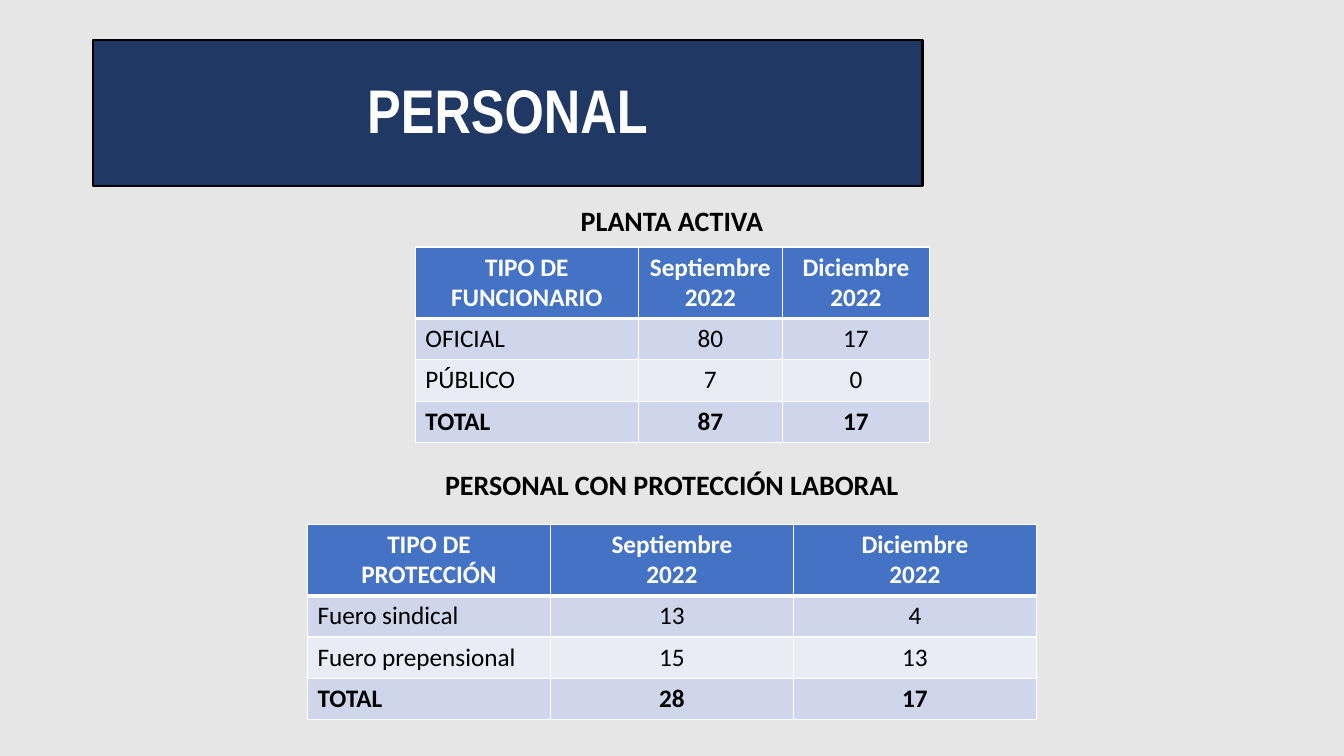
from dataclasses import dataclass

from lxml.etree import SubElement
from pptx import Presentation
from pptx.dml.color import RGBColor
from pptx.enum.text import MSO_ANCHOR, MSO_AUTO_SIZE, PP_ALIGN
from pptx.oxml.ns import qn
from pptx.util import Inches, Pt

COLORS = {
    "background": "E7E6E6",
    "banner": "203864",
    "header": "4472C4",
    "band_dark": "CFD5EA",
    "band_light": "E9EBF5",
    "white": "FFFFFF",
    "black": "000000",
}
HEADER_HEIGHT, ROW_HEIGHT = 0.71, 0.41


@dataclass
class StaffTable:
    heading: str
    heading_top: float
    left: float
    top: float
    widths: list[float]
    rows: list[list[str]]


STAFF_TABLES = [
    StaffTable("PLANTA ACTIVA", 1.97, 4.12, 2.45, [2.21, 1.43, 1.46], [
        ["TIPO DE FUNCIONARIO", "Septiembre\n2022", "Diciembre\n2022"],
        ["OFICIAL", "80", "17"],
        ["PÚBLICO", "7", "0"],
        ["TOTAL", "87", "17"],
    ]),
    StaffTable("PERSONAL CON PROTECCIÓN LABORAL", 4.59, 3.05, 5.2, [2.41] * 3, [
        ["TIPO DE PROTECCIÓN", "Septiembre\n2022", "Diciembre\n2022"],
        ["Fuero sindical", "13", "4"],
        ["Fuero prepensional", "15", "13"],
        ["TOTAL", "28", "17"],
    ]),
]


def rgb(name: str) -> RGBColor:
    return RGBColor.from_string(COLORS[name])


def format_text(frame, size: float, color: str, bold: bool, align,
                font_name: str = "Calibri") -> None:
    for paragraph in frame.paragraphs:
        paragraph.alignment = align
        for run in paragraph.runs:
            run.font.name = font_name
            run.font.size = Pt(size)
            run.font.bold = bold
            run.font.color.rgb = rgb(color)


def add_borders(cell, bottom_width: float) -> None:
    properties = cell._tc.get_or_add_tcPr()
    for side, width in (("L", 1), ("R", 1), ("T", 1), ("B", bottom_width)):
        border = SubElement(properties, qn(f"a:ln{side}"), w=str(Pt(width)))
        fill = SubElement(border, qn("a:solidFill"))
        SubElement(fill, qn("a:srgbClr"), val=COLORS["white"])


def add_heading(slide, text: str, top: float) -> None:
    heading = slide.shapes.add_textbox(
        Inches(3.33), Inches(top), Inches(6.67), Inches(0.44))
    frame = heading.text_frame
    frame.word_wrap = True
    frame.auto_size = MSO_AUTO_SIZE.SHAPE_TO_FIT_TEXT
    frame.text = text
    format_text(frame, 20, "black", True, PP_ALIGN.CENTER)


def add_staff_table(slide, staff: StaffTable) -> None:
    heights = [HEADER_HEIGHT] + [ROW_HEIGHT] * (len(staff.rows) - 1)
    table = slide.shapes.add_table(
        len(staff.rows), len(staff.widths), Inches(staff.left), Inches(staff.top),
        Inches(sum(staff.widths)), Inches(sum(heights))).table
    for column, width in zip(table.columns, staff.widths):
        column.width = Inches(width)
    for row, height in zip(table.rows, heights):
        row.height = Inches(height)

    for r, values in enumerate(staff.rows):
        is_header = r == 0
        is_total = r == len(staff.rows) - 1
        band = "header" if is_header else "band_dark" if r % 2 else "band_light"
        for c, value in enumerate(values):
            cell = table.cell(r, c)
            add_borders(cell, 3 if is_header else 1)
            cell.fill.solid()
            cell.fill.fore_color.rgb = rgb(band)
            cell.text_frame.text = value
            centered = is_header or c > 0
            format_text(cell.text_frame, 18, "white" if is_header else "black",
                        is_header or is_total,
                        PP_ALIGN.CENTER if centered else PP_ALIGN.LEFT)


def add_title(slide) -> None:
    title = slide.shapes.title
    title.left, title.top = Inches(0.92), Inches(0.4)
    title.width, title.height = Inches(8.23), Inches(1.45)
    title.fill.solid()
    title.fill.fore_color.rgb = rgb("banner")
    title.line.color.rgb = rgb("black")
    title.line.width = Pt(1.5)
    frame = title.text_frame
    frame.text = "PERSONAL"
    frame.auto_size = MSO_AUTO_SIZE.NONE
    frame.vertical_anchor = MSO_ANCHOR.MIDDLE
    frame.paragraphs[0].line_spacing = 0.9
    format_text(frame, 44, "white", True, PP_ALIGN.CENTER, "Arial Narrow")


def main() -> None:
    presentation = Presentation()
    presentation.slide_width = Inches(13.33)
    presentation.slide_height = Inches(7.5)
    slide = presentation.slides.add_slide(
        presentation.slide_layouts.get_by_name("Title Only"))
    slide.background.fill.solid()
    slide.background.fill.fore_color.rgb = rgb("background")

    # Title banner
    add_title(slide)

    # Headed staff tables
    for staff in STAFF_TABLES:
        add_heading(slide, staff.heading, staff.heading_top)
        add_staff_table(slide, staff)

    presentation.save("out.pptx")


if __name__ == "__main__":
    main()
